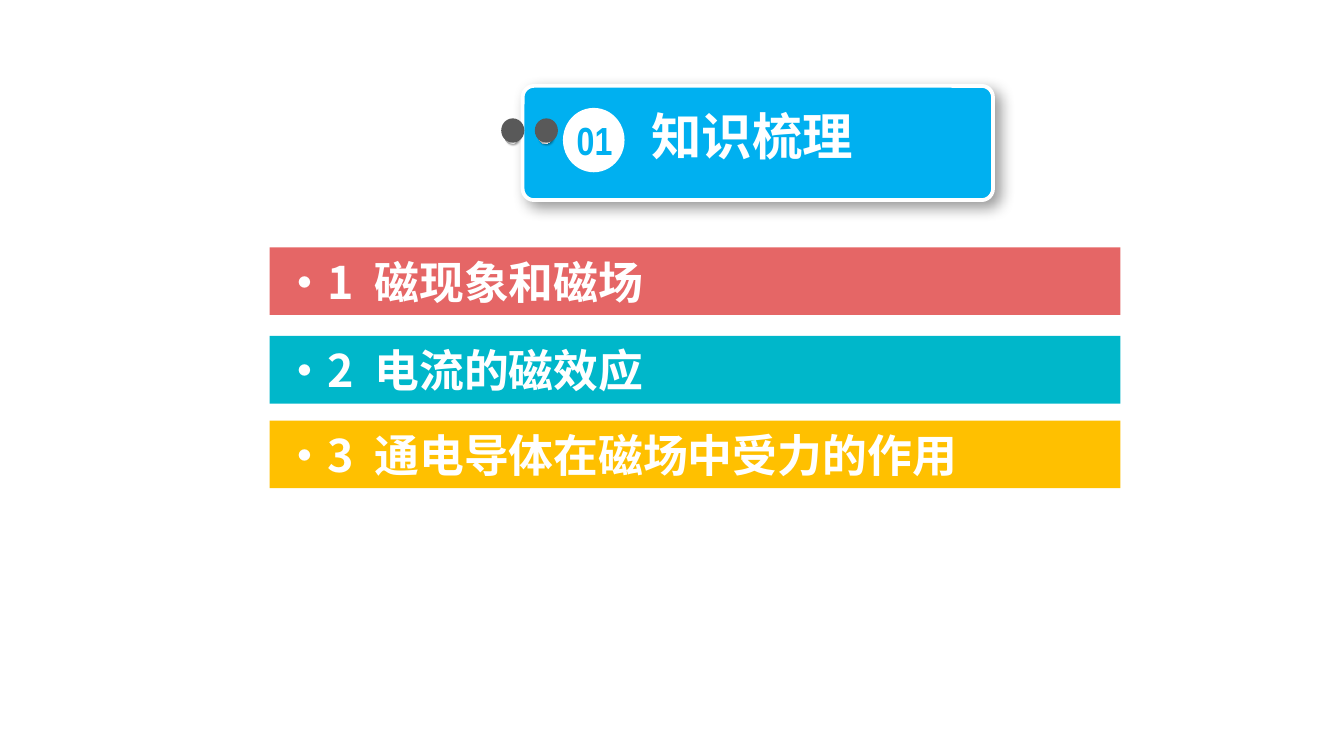
from typing import NamedTuple

from lxml import etree
from pptx import Presentation
from pptx.dml.color import RGBColor as Rgb
from pptx.enum.shapes import MSO_SHAPE as Kind
from pptx.enum.text import MSO_ANCHOR as Anchor, PP_ALIGN as Align
from pptx.oxml import parse_xml
from pptx.oxml.ns import qn
from pptx.util import Pt

NS = 'xmlns:a="http://schemas.openxmlformats.org/drawingml/2006/main"'
SANS = "Noto Sans CJK SC"
BLUE, WHITE, GREY = "00B0F0", "FFFFFF", "595959"
METAL = [(0, WHITE), (17, "A6A6A6"), (35, "F2F2F2"),
         (55, "A6A6A6"), (75, "F2F2F2"), (100, "A6A6A6")]


class Box(NamedTuple):
    x: float
    y: float
    w: float
    h: float


class Row(NamedTuple):
    top: float
    mark: str
    topic: str
    fill: str


ROWS = [
    Row(132.5, "·1", "磁现象和磁场", "E56666"),
    Row(180, "·2", "电流的磁效应", "00B7CA"),
    Row(225.3, "·3", "通电导体在磁场中受力的作用", "FFC000"),
]


def color(code: str) -> Rgb:
    return Rgb.from_string(code)


def place(box: Box) -> list:
    return [Pt(n) for n in box]


def draw(slide, kind: Kind, box: Box, fill: str):
    shape = slide.shapes.add_shape(kind, *place(box))
    shape.shadow.inherit = False
    shape.fill.solid()
    shape.fill.fore_color.rgb = color(fill)
    shape.line.fill.background()
    return shape


def shade(shape, blur: float, dist: float) -> None:
    """Cast a soft black shadow to the lower right."""
    props = shape._element.spPr
    props.find(qn("a:effectLst")).append(parse_xml(
        f'<a:outerShdw {NS} blurRad="{Pt(blur)}" dist="{Pt(dist)}" '
        'dir="2700000" algn="tl" rotWithShape="0"><a:srgbClr val="000000">'
        '<a:alpha val="40000"/></a:srgbClr></a:outerShdw>'))


def polish(shape) -> None:
    """Swap the plain fill for a metal gradient."""
    props = shape._element.spPr
    stops = "".join(
        f'<a:gs pos="{pos * 1000}"><a:srgbClr val="{code}"/></a:gs>'
        for pos, code in METAL)
    props.replace(props.find(qn("a:solidFill")), parse_xml(
        f'<a:gradFill {NS} rotWithShape="1"><a:gsLst>{stops}</a:gsLst>'
        '<a:lin ang="2700000" scaled="0"/></a:gradFill>'))


def style(run, face: str, size: float, code: str) -> None:
    font = run.font
    font.name, font.size, font.bold = face, Pt(size), True
    font.color.rgb = color(code)
    east = etree.SubElement(run._r.get_or_add_rPr(), qn("a:ea"))
    east.set("typeface", face)


def label(slide, box: Box, text: str, face: str, size: float,
          code: str) -> None:
    frame = slide.shapes.add_textbox(*place(box)).text_frame
    frame.word_wrap = True
    frame.vertical_anchor = Anchor.MIDDLE
    frame.text = text
    para = frame.paragraphs[0]
    para.alignment = Align.CENTER
    style(para.runs[0], face, size, code)


def stud(slide, x: float) -> None:
    """Draw a dark hole over a shaded metal pin."""
    pin = draw(slide, Kind.OVAL, Box(x + 2, 69.8, 7.2, 7.2), WHITE)
    pin.rotation = 270
    polish(pin)
    shade(pin, 1, 1)
    draw(slide, Kind.OVAL, Box(x, 63.4, 12.4, 13), GREY)


def banner(slide) -> None:
    card = draw(slide, Kind.ROUNDED_RECTANGLE, Box(280, 46, 252, 61.2), BLUE)
    card.adjustments[0] = 0.1
    card.line.color.rgb = color(WHITE)
    card.line.width = Pt(2)
    shade(card, 8, 4)
    for x in (286.5, 268.5):
        stud(slide, x)
    draw(slide, Kind.OVAL, Box(301.6, 57.8, 33, 34.5), WHITE)
    label(slide, Box(299.5, 58.5, 38, 32.4), "01", "Arial Narrow", 21, BLUE)
    label(slide, Box(323, 52.5, 160, 40.3), "知识梳理", SANS, 27, WHITE)


def bar(slide, row: Row) -> None:
    shape = draw(slide, Kind.RECTANGLE, Box(144.5, row.top, 455.7, 36.2),
                 row.fill)
    frame = shape.text_frame
    frame.word_wrap = True
    frame.vertical_anchor = Anchor.MIDDLE
    para = frame.paragraphs[0]
    para.alignment = Align.LEFT
    for text in (row.mark, " ", row.topic):
        run = para.add_run()
        run.text = text
        style(run, SANS, 24, WHITE)
    gap = para.runs[1]._r.get_or_add_rPr()
    gap.set("spc", "540")


def main() -> None:
    deck = Presentation()
    deck.slide_width, deck.slide_height = Pt(720), Pt(405)
    slide = deck.slides.add_slide(deck.slide_layouts[6])
    banner(slide)
    for row in ROWS:
        bar(slide, row)
    deck.save("out.pptx")


if __name__ == "__main__":
    main()
